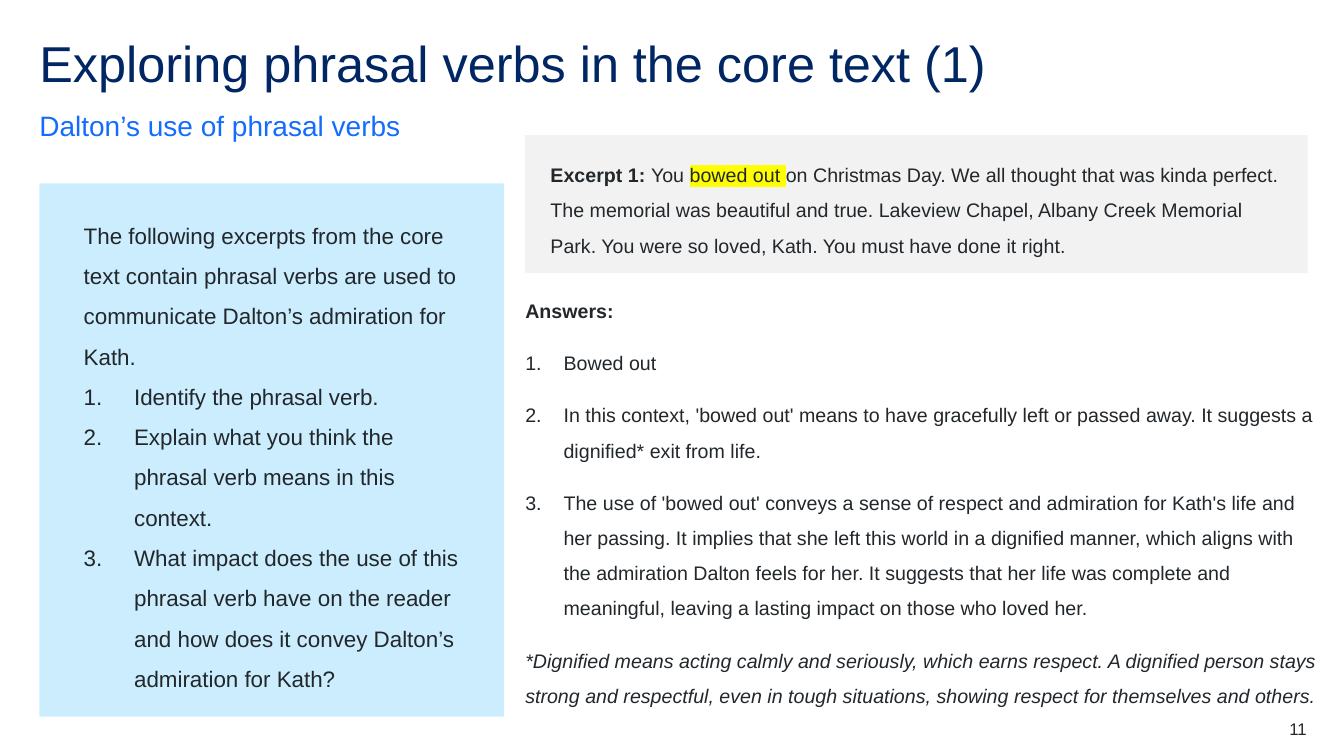
from pptx import Presentation
from pptx.dml.color import RGBColor
from pptx.enum.shapes import MSO_SHAPE
from pptx.enum.text import MSO_ANCHOR, MSO_AUTO_SIZE, PP_ALIGN
from pptx.oxml.ns import qn
from pptx.util import Inches, Pt
from lxml.etree import SubElement, Element

NAVY = RGBColor(0x00, 0x26, 0x64)
BLUE = RGBColor(0x14, 0x6C, 0xFD)
INK = RGBColor(0x22, 0x27, 0x2B)
SKY = RGBColor(0xCB, 0xED, 0xFD)
GREY = RGBColor(0xF2, 0xF2, 0xF2)
YELLOW = RGBColor(0xFF, 0xFF, 0x00)

FONT = "Arial"
LEFT = 0.39
RIGHT_COLUMN = 5.21

TASK = "The following excerpts from the core text contain phrasal verbs are used to communicate Dalton’s admiration for Kath."
QUESTIONS = [
    "Identify the phrasal verb.",
    "Explain what you think the phrasal verb means in this context.",
    "What impact does the use of this phrasal verb have on the reader and how does it convey Dalton’s admiration for Kath?",
]
EXCERPT = [
    ("Excerpt 1: ", {"bold": True}),
    ("You ", {}),
    ("bowed out ", {"highlight": YELLOW}),
    ("on Christmas Day. We all thought that was kinda perfect. The memorial was beautiful and true. "
     "Lakeview Chapel, Albany Creek Memorial Park. You were so loved, Kath. You must have done it right.", {}),
]
ANSWERS = [
    "Bowed out",
    "In this context, 'bowed out' means to have gracefully left or passed away. It suggests a dignified* exit from life.",
    "The use of 'bowed out' conveys a sense of respect and admiration for Kath's life and her passing. "
    "It implies that she left this world in a dignified manner, which aligns with the admiration Dalton "
    "feels for her. It suggests that her life was complete and meaningful, leaving a lasting impact on "
    "those who loved her.",
]
FOOTNOTE = ("*Dignified means acting calmly and seriously, which earns respect. A dignified person stays "
            "strong and respectful, even in tough situations, showing respect for themselves and others.")


def place(sp, box):
    sp.left, sp.top, sp.width, sp.height = (Inches(v) for v in box)


def set_frame(sp, anchor=MSO_ANCHOR.TOP, insets=(0, 0, 0, 0)):
    """Set anchor and left, top, right, bottom insets; return the text frame."""
    tf = sp.text_frame
    tf.word_wrap = True
    tf.auto_size = MSO_AUTO_SIZE.NONE
    tf.vertical_anchor = anchor
    for side, inset in zip(("left", "top", "right", "bottom"), insets):
        setattr(tf, f"margin_{side}", Inches(inset))
    return tf


def set_list(p, indent):
    """Number the paragraph with a hanging indent, or clear its bullet if indent is 0."""
    pPr = p._p.get_or_add_pPr()
    pPr.set("marL", str(Inches(indent)))
    pPr.set("indent", str(-Inches(indent)))
    if indent:
        SubElement(pPr, qn("a:buFont"), typeface="+mj-lt")
        SubElement(pPr, qn("a:buAutoNum"), type="arabicPeriod")
    else:
        SubElement(pPr, qn("a:buNone"))


def add_run(p, text, size, color, highlight=None, **style):
    r = p.add_run()
    r.text = text
    r.font.color.rgb = color
    for name, value in {"name": FONT, "size": Pt(size), **style}.items():
        setattr(r.font, name, value)
    if highlight is not None:
        mark = Element(qn("a:highlight"))
        SubElement(mark, qn("a:srgbClr"), val=str(highlight))
        r.font._element.find(qn("a:solidFill")).addnext(mark)


def write(tf, paragraphs, size, color=INK, spacing=1.5, after=0, align=PP_ALIGN.LEFT):
    """Fill the frame from (runs, indent) pairs, each run being (text, style)."""
    for i, (runs, indent) in enumerate(paragraphs):
        p = tf.add_paragraph() if i else tf.paragraphs[0]
        layout = {"alignment": align, "line_spacing": spacing,
                  "space_before": Pt(0), "space_after": Pt(after)}
        for name, value in layout.items():
            setattr(p, name, value)
        set_list(p, indent)
        for text, style in runs:
            add_run(p, text, size, color, **style)


def plain(text, indent=0, **style):
    return [(text, style)], indent


def add_panel(s, box, fill, insets):
    sp = s.shapes.add_shape(MSO_SHAPE.RECTANGLE, *(Inches(v) for v in box))
    sp.shadow.inherit = False
    sp.fill.solid()
    sp.fill.fore_color.rgb = fill
    sp.line.fill.background()
    return set_frame(sp, MSO_ANCHOR.MIDDLE, insets)


def add_text(s, box):
    return set_frame(s.shapes.add_textbox(*(Inches(v) for v in box)))


def headings(s, title_box, subtitle_box):
    title, subtitle = s.shapes.title, s.placeholders[1]
    place(title, title_box)
    place(subtitle, subtitle_box)
    write(set_frame(title), [plain("Exploring phrasal verbs in the core text (1)")],
          36, NAVY, spacing=0.9)
    write(set_frame(subtitle, MSO_ANCHOR.BOTTOM), [plain("Dalton’s use of phrasal verbs")],
          20, BLUE, after=12)


def task_panel(s, box):
    tf = add_panel(s, box, SKY, (0.44, 0.05, 0.39, 0.05))
    write(tf, [plain(TASK)] + [plain(q, 0.5) for q in QUESTIONS], 16)


def excerpt_panel(s, box):
    tf = add_panel(s, box, GREY, (0.25, 0, 0.2, 0))
    write(tf, [(EXCERPT, 0)], 14, after=12)


def answers(s, box):
    paragraphs = [plain("Answers:", bold=True)]
    paragraphs += [plain(a, 0.38) for a in ANSWERS]
    paragraphs.append(plain(FOOTNOTE, italic=True))
    write(add_text(s, box), paragraphs, 14, after=12)


def page_number(s, box):
    write(add_text(s, box), [plain("11")], 12, spacing=1.0, align=PP_ALIGN.RIGHT)


def main():
    prs = Presentation()
    prs.slide_width, prs.slide_height = Inches(13.33), Inches(7.5)
    s = prs.slides.add_slide(prs.slide_layouts[1])
    headings(s, (LEFT, 0.39, 12.56, 0.6), (LEFT, 1.07, 12.56, 0.34))
    task_panel(s, (LEFT, 1.82, 4.61, 5.29))
    excerpt_panel(s, (RIGHT_COLUMN, 1.34, 7.76, 1.37))
    answers(s, (RIGHT_COLUMN, 2.85, 7.89, 4.12))
    page_number(s, (12.17, 7.13, 0.79, 0.2))
    prs.save("out.pptx")


if __name__ == "__main__":
    main()
